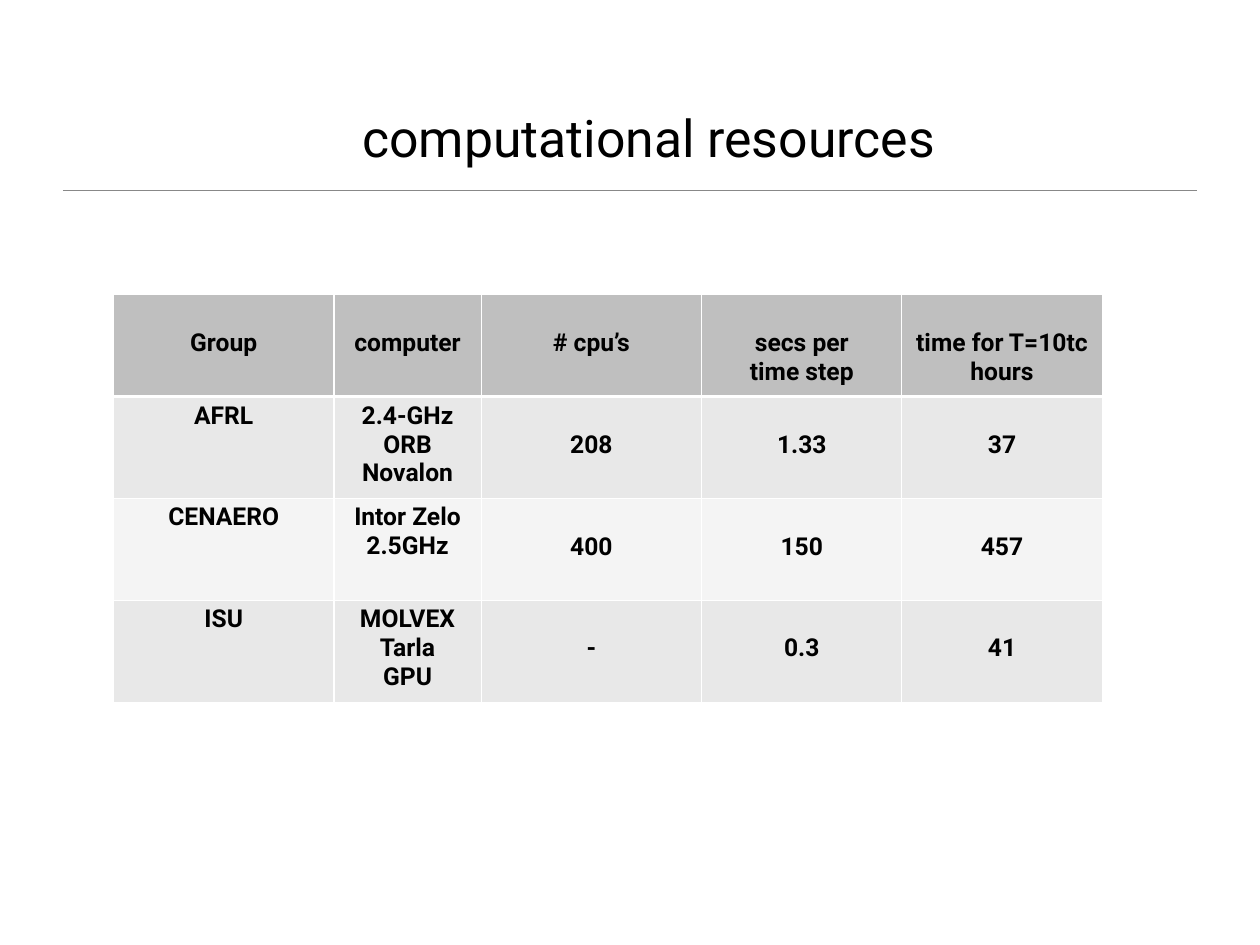
"""Build the computational resources slide."""
from dataclasses import dataclass

from lxml import etree
from pptx import Presentation
from pptx.dml.color import RGBColor
from pptx.enum.shapes import MSO_CONNECTOR
from pptx.enum.text import MSO_ANCHOR, PP_ALIGN
from pptx.oxml.ns import qn
from pptx.util import Inches, Pt

STRAIGHT = MSO_CONNECTOR.STRAIGHT
CENTER = PP_ALIGN.CENTER
TOP, BOTTOM = MSO_ANCHOR.TOP, MSO_ANCHOR.BOTTOM

FONT = "Roboto"
BLACK, WHITE, RULE_GREY = "000000", "FFFFFF", "888888"
COL_WIDTHS = (2.49, 1.66, 2.49, 2.26, 2.26)
ROW_HEIGHT = 1.15
MARGIN = 0.05
LINE_HEIGHT = 0.33


@dataclass
class Row:
    fill: str
    cells: tuple[str, ...]
    lowered_from: int
    top_line: int = 1
    bottom_line: int = 1


ROWS = (
    Row("BFBFBF", ("Group", "computer", "# cpu’s", "secs per\ntime step",
                   "time for T=10tc\nhours"), 0, bottom_line=3),
    Row("E8E8E8", ("AFRL", "2.4-GHz ORB Novalon", "208", "1.33", "37"), 2, top_line=3),
    Row("F4F4F4", ("CENAERO", "Intor Zelo 2.5GHz", "400", "150", "457"), 2),
    Row("E8E8E8", ("ISU", "MOLVEX Tarla\nGPU", "-", "0.3", "41"), 2),
)


def rgb(value: str) -> RGBColor:
    return RGBColor.from_string(value)


def write(tf, text: str, size: int, bold: bool = False) -> None:
    tf.text = text
    for p in tf.paragraphs:
        p.alignment = CENTER
        for r in p.runs:
            r.font.name = FONT
            r.font.size = Pt(size)
            r.font.bold = bold
            r.font.color.rgb = rgb(BLACK)


def add_border(cell, side: str, width: int) -> None:
    tc_pr = cell._tc.get_or_add_tcPr()
    ln = etree.SubElement(tc_pr, qn(f"a:ln{side}"), w=str(Pt(width)))
    fill = etree.SubElement(ln, qn("a:solidFill"))
    etree.SubElement(fill, qn("a:srgbClr"), val=WHITE)


def add_title(slide, text: str) -> None:
    sp = slide.shapes.add_textbox(Inches(2.03), Inches(0.42), Inches(10.58), Inches(1.53))
    tf = sp.text_frame
    tf.word_wrap = True
    tf.vertical_anchor = BOTTOM
    tf.margin_left = tf.margin_right = tf.margin_top = tf.margin_bottom = Inches(0.06)
    write(tf, text, 42)


def add_rule(slide) -> None:
    line = slide.shapes.add_connector(
        STRAIGHT, Inches(0.71), Inches(2.15), Inches(13.51), Inches(2.15))
    line.line.color.rgb = rgb(RULE_GREY)
    line.line.width = Pt(1)
    etree.SubElement(line._element.spPr, qn("a:effectLst"))


def add_resource_table(slide) -> None:
    table = slide.shapes.add_table(
        len(ROWS), len(COL_WIDTHS), Inches(1.28), Inches(3.33),
        Inches(sum(COL_WIDTHS)), Inches(ROW_HEIGHT * len(ROWS))).table
    for column, width in zip(table.columns, COL_WIDTHS):
        column.width = Inches(width)
    for i, row in enumerate(ROWS):
        table.rows[i].height = Inches(ROW_HEIGHT)
        widths = {"L": 1, "R": 1, "T": row.top_line, "B": row.bottom_line}
        for j, text in enumerate(row.cells):
            cell = table.cell(i, j)
            cell.vertical_anchor = TOP
            cell.margin_top = Inches(MARGIN + (LINE_HEIGHT if j >= row.lowered_from else 0))
            cell.margin_bottom = Inches(MARGIN)
            for side, width in widths.items():
                add_border(cell, side, width)
            cell.fill.solid()
            cell.fill.fore_color.rgb = rgb(row.fill)
            write(cell.text_frame, text, 20, bold=True)


def main() -> None:
    prs = Presentation()
    prs.slide_width, prs.slide_height = Inches(14.22), Inches(10.67)
    slide = prs.slides.add_slide(prs.slide_layouts[6])
    add_rule(slide)
    add_title(slide, "computational resources")
    add_resource_table(slide)
    prs.save("out.pptx")


if __name__ == "__main__":
    main()
